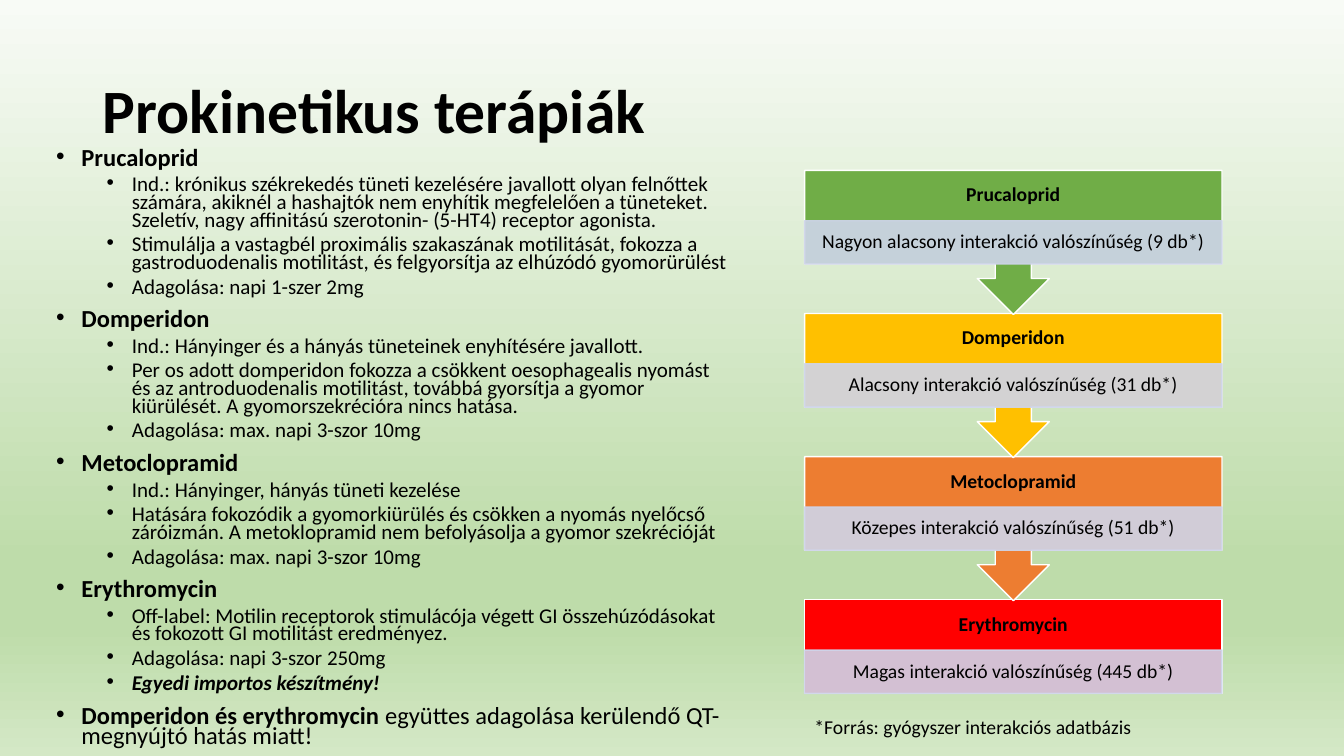
from lxml.etree import SubElement
from pptx import Presentation
from pptx.dml.color import RGBColor
from pptx.enum.shapes import MSO_SHAPE
from pptx.enum.text import MSO_ANCHOR, PP_ALIGN
from pptx.oxml.ns import qn
from pptx.util import Inches, Pt

BACKGROUND_STOPS = [(0, "F8FBF6"), (74, "BEDCAA"), (83, "BEDCAA"), (100, "D4E8C6")]

THERAPIES = [
    ("Prucaloprid", [
        "Ind.: krónikus székrekedés tüneti kezelésére javallott olyan felnőttek számára, akiknél a hashajtók nem "
        "enyhítik megfelelően a tüneteket. Szeletív, nagy affinitású szerotonin- (5-HT4) receptor agonista.",
        "Stimulálja a vastagbél proximális szakaszának motilitását, fokozza a gastroduodenalis motilitást, "
        "és felgyorsítja az elhúzódó gyomorürülést",
        "Adagolása: napi 1-szer 2mg",
    ]),
    ("Domperidon", [
        "Ind.: Hányinger és a hányás tüneteinek enyhítésére javallott.",
        "Per os adott domperidon fokozza a csökkent oesophagealis nyomást és az antroduodenalis motilitást, "
        "továbbá gyorsítja a gyomor kiürülését. A gyomorszekrécióra nincs hatása.",
        "Adagolása: max. napi 3-szor 10mg",
    ]),
    ("Metoclopramid", [
        "Ind.: Hányinger, hányás tüneti kezelése",
        "Hatására fokozódik a gyomorkiürülés és csökken a nyomás nyelőcső záróizmán. "
        "A metoklopramid nem befolyásolja a gyomor szekrécióját",
        "Adagolása: max. napi 3-szor 10mg",
    ]),
    ("Erythromycin", [
        "Off-label: Motilin receptorok stimulácója végett GI összehúzódásokat és fokozott GI motilitást eredményez.",
        "Adagolása: napi 3-szor 250mg",
    ]),
]

INTERACTIONS = [
    ("Prucaloprid", "Nagyon alacsony interakció valószínűség (9 db*)", "70AD47"),
    ("Domperidon", "Alacsony interakció valószínűség (31 db*)", "FFC000"),
    ("Metoclopramid", "Közepes interakció valószínűség (51 db*)", "ED7D31"),
    ("Erythromycin", "Magas interakció valószínűség (445 db*)", "FF0000"),
]


def color(value):
    return RGBColor.from_string(value)


def add_text(paragraph, text, size=14, bold=False, italic=False, align=None, spacing=None):
    run = paragraph.add_run()
    run.text = text
    run.font.name = "Calibri"
    run.font.size = Pt(size)
    run.font.bold = bold
    run.font.italic = italic
    run.font.color.rgb = color("000000")
    if align is not None:
        paragraph.alignment = align
    if spacing is not None:
        paragraph.line_spacing = spacing


def set_frame(shape, anchor=MSO_ANCHOR.TOP, side=0.1, edge=0.05):
    frame = shape.text_frame
    frame.word_wrap = True
    frame.vertical_anchor = anchor
    frame.margin_left = frame.margin_right = Inches(side)
    frame.margin_top = frame.margin_bottom = Inches(edge)
    return frame


def add_box(slide, left, top, width, height, **frame_format):
    box = slide.shapes.add_textbox(Inches(left), Inches(top), Inches(width), Inches(height))
    return set_frame(box, **frame_format)


def add_block(slide, kind, left, top, width, height, fill, line, opacity=100):
    shape = slide.shapes.add_shape(kind, Inches(left), Inches(top), Inches(width), Inches(height))
    shape.shadow.inherit = False
    shape.fill.solid()
    shape.fill.fore_color.rgb = color(fill)
    shape.line.color.rgb = color(line)
    shape.line.width = Pt(1)
    if opacity < 100:
        for element in shape._element.spPr.iter(qn("a:srgbClr")):
            SubElement(element, qn("a:alpha"), val=str(opacity * 1000))
    return shape


def set_background(slide):
    fill = slide.background.fill
    fill.gradient()
    fill.gradient_angle = 270
    stops = next(slide._element.iter(qn("a:gsLst")))
    for stop in list(stops):
        stops.remove(stop)
    for position, value in BACKGROUND_STOPS:
        stop = SubElement(stops, qn("a:gs"), pos=str(position * 1000))
        SubElement(stop, qn("a:srgbClr"), val=value)


def add_title(slide, left, top, width, height):
    frame = add_box(slide, left, top, width, height, anchor=MSO_ANCHOR.MIDDLE)
    add_text(frame.paragraphs[0], "Prokinetikus terápiák", size=44, bold=True, spacing=0.9)


def add_bullet(frame, level=0):
    first = frame.paragraphs[0]
    paragraph = frame.add_paragraph() if first.runs else first
    paragraph.level = level
    paragraph.line_spacing = 0.7
    paragraph.space_before = Pt(5 if level else 10)
    properties = paragraph._p.get_or_add_pPr()
    properties.set("marL", str(Inches(0.25 + 0.5 * level)))
    properties.set("indent", str(Inches(-0.25)))
    SubElement(properties, qn("a:buFont"), typeface="Arial")
    SubElement(properties, qn("a:buChar"), char="•")
    return paragraph


def add_therapy_list(slide, left, top, width, height):
    frame = add_box(slide, left, top, width, height)
    for drug, details in THERAPIES:
        add_text(add_bullet(frame), drug, size=17.5, bold=True)
        for detail in details:
            add_text(add_bullet(frame, level=1), detail, size=15)
    add_text(add_bullet(frame, level=1), "Egyedi importos készítmény!", size=15, bold=True, italic=True)
    warning = add_bullet(frame)
    add_text(warning, "Domperidon és erythromycin ", size=17.5, bold=True)
    add_text(warning, "együttes adagolása kerülendő QT-megnyújtó hatás miatt!", size=17.5)


def add_interaction_flow(slide, left, top, width, height):
    body_height, head_height, detail_height = 0.93, 0.5, 0.43
    pitch = (height - body_height) / (len(INTERACTIONS) - 1)
    centered = {"align": PP_ALIGN.CENTER, "spacing": 0.9}
    for index, (drug, detail, fill) in reversed(list(enumerate(INTERACTIONS))):
        step_top = top + index * pitch
        if index == len(INTERACTIONS) - 1:
            add_block(slide, MSO_SHAPE.RECTANGLE, left, step_top, width, body_height, fill, "FFFFFF")
        else:
            callout = add_block(slide, MSO_SHAPE.UP_ARROW_CALLOUT, left, step_top, width, pitch + 0.01, fill, "FFFFFF")
            callout.rotation = 180
        head = add_box(slide, left, step_top, width, head_height, anchor=MSO_ANCHOR.MIDDLE, side=0.11, edge=0.11)
        add_text(head.paragraphs[0], drug, bold=True, **centered)
        band = add_block(slide, MSO_SHAPE.RECTANGLE, left, step_top + head_height, width, detail_height,
                         "CFD5EA", "CFD5EA", opacity=90)
        band_frame = set_frame(band, anchor=MSO_ANCHOR.MIDDLE, side=0.11, edge=0.02)
        add_text(band_frame.paragraphs[0], detail, **centered)


def add_source_note(slide, left, top, width, height):
    frame = add_box(slide, left, top, width, height)
    add_text(frame.paragraphs[0], "*Forrás: gyógyszer interakciós adatbázis")


def main():
    presentation = Presentation()
    presentation.slide_width = Inches(13.33)
    presentation.slide_height = Inches(7.5)
    slide = presentation.slides.add_slide(presentation.slide_layouts[6])
    set_background(slide)
    add_title(slide, 0.92, 0.4, 11.5, 1.45)
    add_therapy_list(slide, 0.46, 1.44, 6.86, 6.06)
    add_interaction_flow(slide, 7.98, 1.69, 4.14, 5.19)
    add_source_note(slide, 7.98, 7.04, 4.14, 0.34)
    presentation.save("out.pptx")


if __name__ == "__main__":
    main()
